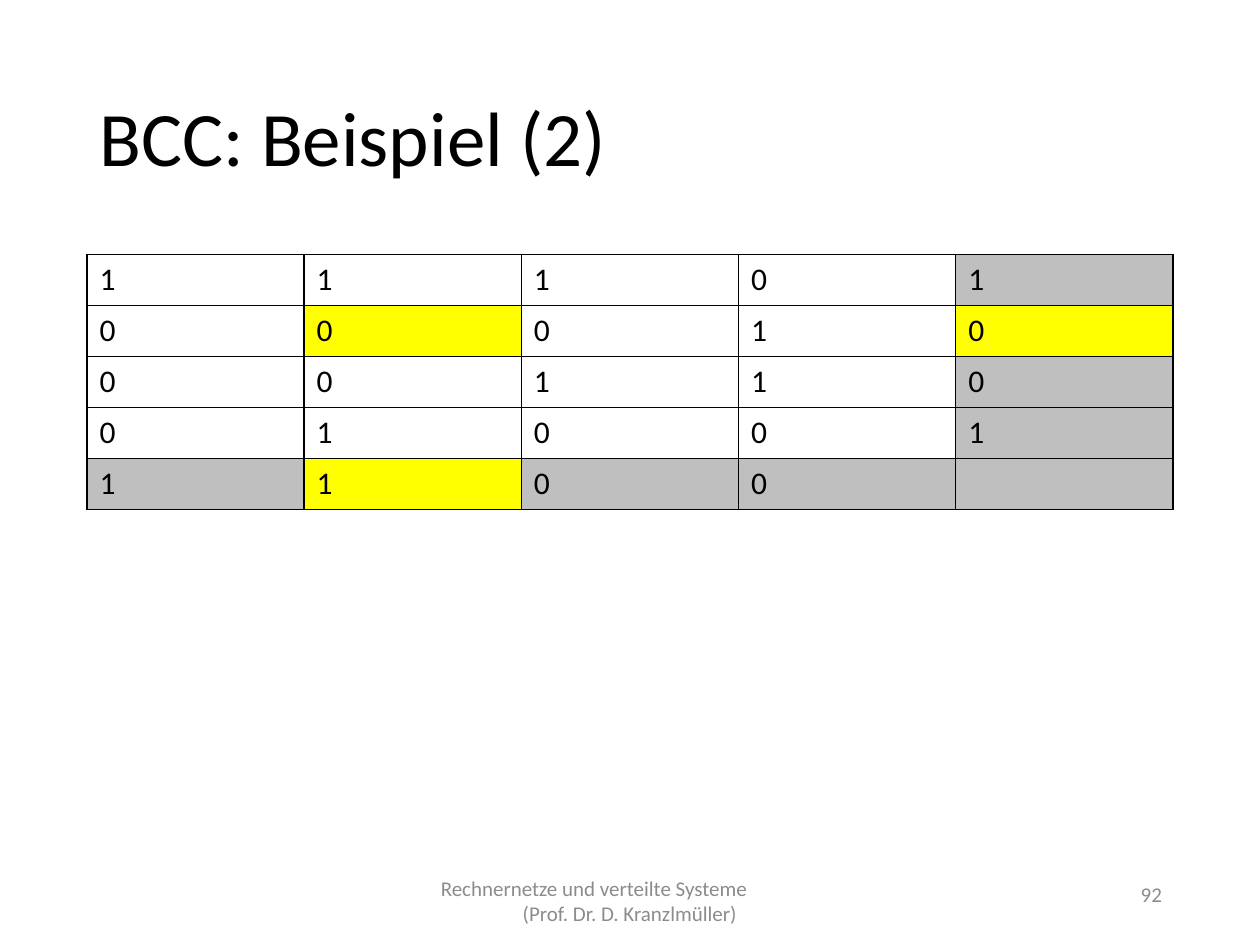
from dataclasses import dataclass, field

from lxml.etree import SubElement
from pptx import Presentation
from pptx.dml.color import RGBColor
from pptx.enum.text import MSO_ANCHOR, PP_ALIGN
from pptx.oxml.ns import qn
from pptx.util import Inches, Pt

WIDTH, HEIGHT = 10, 7.5
MARGIN = 0.69
CONTENT = WIDTH - 2 * MARGIN
FOOTER_TOP = 6.95
BLACK, GREY, PARITY, ERROR = "000000", "8C8C8C", "BFBFBF", "FFFF00"

BITS = ["11101", "00010", "00110", "01001", "1100 "]
ERROR_CELLS = {(1, 1), (1, 4), (4, 1)}
ROW_HEIGHT = 0.405


@dataclass
class Label:
    text: str
    box: tuple[float, float, float, float]
    size: float
    color: str
    frame: dict = field(default_factory=dict)
    paragraph: dict = field(default_factory=dict)
    hanging: tuple[float, float] | None = None  # left margin, first-line indent


def rgb(color: str) -> RGBColor:
    return RGBColor.from_string(color)


def apply(target, values: dict) -> None:
    for name, value in values.items():
        setattr(target, name, value)


def write(p, text: str, size: float, color: str) -> None:
    r = p.add_run()
    r.text = text
    apply(r.font, {"name": "Calibri", "size": Pt(size)})
    r.font.color.rgb = rgb(color)


def add_label(s, label: Label) -> None:
    tf = s.shapes.add_textbox(*map(Inches, label.box)).text_frame
    apply(tf, {"word_wrap": True, **label.frame})
    p = tf.paragraphs[0]
    apply(p, label.paragraph)
    if label.hanging:
        pPr = p._p.get_or_add_pPr()
        for name, value in zip(("marL", "indent"), label.hanging):
            pPr.set(name, str(Inches(value)))
    write(p, label.text, label.size, label.color)


def add_borders(cell) -> None:
    tcPr = cell._tc.get_or_add_tcPr()
    for side in ("lnL", "lnR", "lnT", "lnB"):
        ln = SubElement(tcPr, qn(f"a:{side}"), w=str(Pt(1)))
        fill = SubElement(ln, qn("a:solidFill"))
        SubElement(fill, qn("a:srgbClr"), val=BLACK)


def add_bit_table(s, bits: list[str]) -> None:
    rows, cols = len(bits), len(bits[0])
    table = s.shapes.add_table(
        rows, cols, Inches(MARGIN), Inches(2.02),
        Inches(CONTENT), Inches(rows * ROW_HEIGHT)).table
    apply(table, {"first_row": False, "horz_banding": False})
    for i, line in enumerate(bits):
        for j, bit in enumerate(line):
            cell = table.cell(i, j)
            add_borders(cell)
            if (i, j) in ERROR_CELLS or i == rows - 1 or j == cols - 1:
                cell.fill.solid()
                cell.fill.fore_color.rgb = rgb(
                    ERROR if (i, j) in ERROR_CELLS else PARITY)
            else:
                cell.fill.background()
            if bit.strip():
                write(cell.text_frame.paragraphs[0], bit, 18, BLACK)


LABELS = [
    Label("BCC: Beispiel (2)", (MARGIN, 0.4, CONTENT, 1.45), 44, BLACK,
          {"vertical_anchor": MSO_ANCHOR.MIDDLE}, {"line_spacing": 0.9}),
    # The right inset makes the lecturer's name wrap to the second line
    Label("Rechnernetze und verteilte Systeme (Prof. Dr. D. Kranzlmüller)",
          (3.31, FOOTER_TOP, 3.38, 0.4), 12, GREY,
          {"vertical_anchor": MSO_ANCHOR.MIDDLE, "margin_right": Inches(0.5)},
          hanging=(0.74, -0.65)),
    Label("92", (8.34, FOOTER_TOP, 0.98, 0.3), 12, GREY,
          paragraph={"alignment": PP_ALIGN.RIGHT}),
]


def main() -> None:
    prs = Presentation()
    apply(prs, {"slide_width": Inches(WIDTH), "slide_height": Inches(HEIGHT)})
    s = prs.slides.add_slide(prs.slide_layouts[6])
    # Title, footer and page number
    for label in LABELS:
        add_label(s, label)
    # Data bits with row and column parity
    add_bit_table(s, BITS)
    prs.save("out.pptx")


if __name__ == "__main__":
    main()
